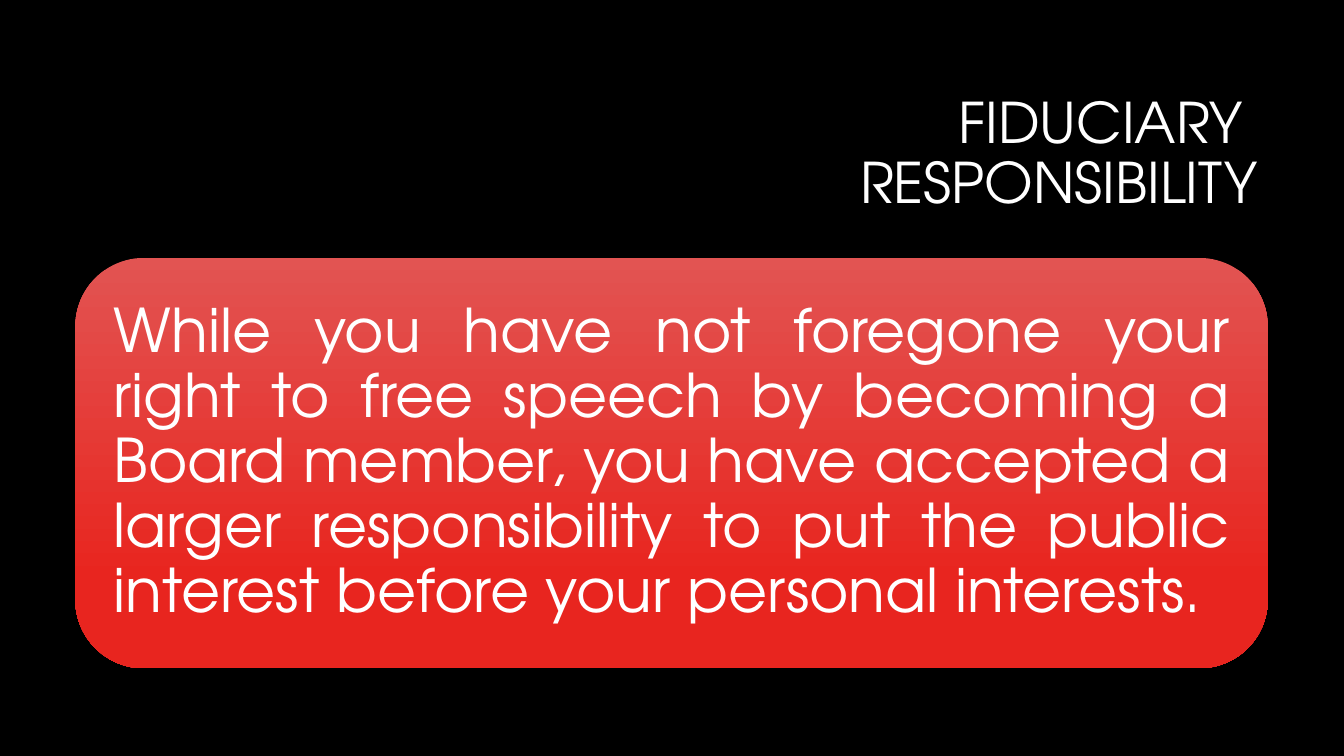
"""Build the fiduciary responsibility slide."""
from dataclasses import dataclass

from pptx import Presentation
from pptx import util as u
from pptx.dml.color import RGBColor
from pptx.enum import shapes, text
from pptx.slide import Slide


@dataclass(frozen=True)
class Theme:
    """Hold the colours, font and type sizes."""
    back: RGBColor = RGBColor(0x00, 0x00, 0x00)
    ink: RGBColor = RGBColor(0xFF, 0xFF, 0xFF)
    top: RGBColor = RGBColor(0xE2, 0x54, 0x52)
    base: RGBColor = RGBColor(0xE8, 0x25, 0x1F)
    font: str = "TeX Gyre Adventor"
    head: int = 40
    body: int = 43


@dataclass(frozen=True)
class Block:
    """Describe a block of text, with lengths in centimetres."""
    words: str
    left: float
    top: float
    width: float
    height: float
    size: int
    align: text.PP_ALIGN
    pad_x: float
    pad_y: float
    panel: bool = False


THEME = Theme()
BLOCKS = (
    Block("FIDUCIARY \vRESPONSIBILITY", 8.05, 2.13, 23.9, 3.58,
          THEME.head, text.PP_ALIGN.RIGHT, 0.25, 0.13),
    Block("While you have not foregone your right to free speech by becoming "
          "a Board member, you have accepted a larger responsibility to put "
          "the public interest before your personal interests.",
          1.9, 6.5, 30.05, 10.34, THEME.body, text.PP_ALIGN.JUSTIFY,
          0.46, 0.46, panel=True),
)


def draw(slide: Slide, block: Block) -> None:
    """Draw a text block, on a rounded gradient panel if asked."""
    area = [u.Cm(n) for n in (block.left, block.top, block.width, block.height)]
    if block.panel:
        shape = slide.shapes.add_shape(
            shapes.MSO_SHAPE.ROUNDED_RECTANGLE, *area)
        shape.shadow.inherit = False
        shape.line.fill.background()
        shape.fill.gradient()
        shape.fill.gradient_angle = 270
        stops = ((0, THEME.top), (0.78, THEME.base))
        for stop, (place, tint) in zip(shape.fill.gradient_stops, stops):
            stop.position = place
            stop.color.rgb = tint
    else:
        shape = slide.shapes.add_textbox(*area)
    frame = shape.text_frame
    frame.word_wrap = True
    frame.vertical_anchor = text.MSO_ANCHOR.MIDDLE
    frame.margin_left = frame.margin_right = u.Cm(block.pad_x)
    frame.margin_top = frame.margin_bottom = u.Cm(block.pad_y)
    para = frame.paragraphs[0]
    para.text = block.words
    para.alignment = block.align
    para.line_spacing = 0.9
    para.font.name = THEME.font
    para.font.size = u.Pt(block.size)
    para.font.color.rgb = THEME.ink


def main() -> None:
    """Create and save the deck."""
    deck = Presentation()
    deck.slide_width, deck.slide_height = u.Cm(33.87), u.Cm(19.05)
    slide = deck.slides.add_slide(deck.slide_layouts[6])
    slide.background.fill.solid()
    slide.background.fill.fore_color.rgb = THEME.back
    for block in BLOCKS:
        draw(slide, block)
    deck.save("out.pptx")


if __name__ == "__main__":
    main()
